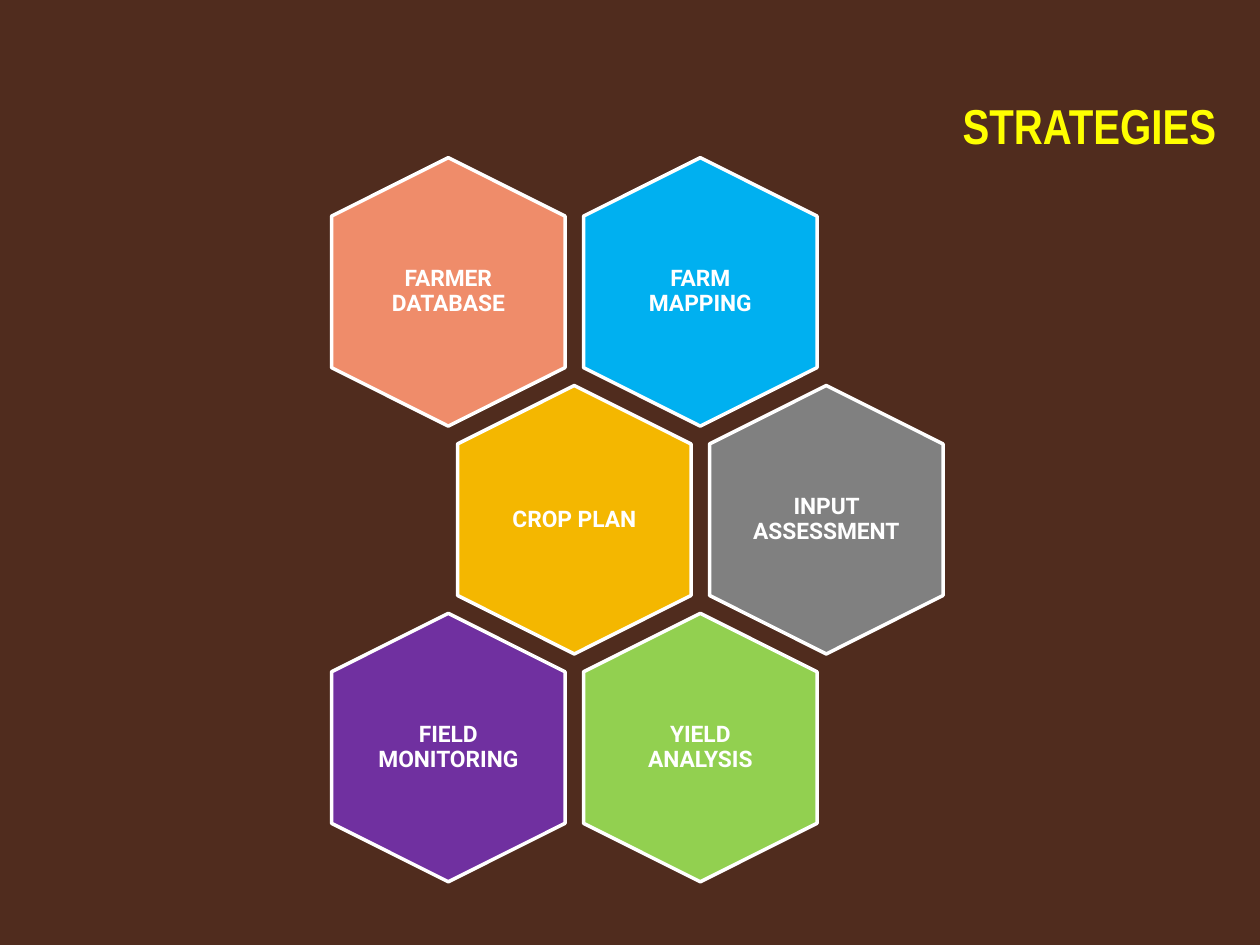
import pptx
import pptx.dml.color
import pptx.enum.text
import pptx.util

Pt = pptx.util.Pt
ALIGN = pptx.enum.text.PP_ALIGN
ANCHOR = pptx.enum.text.MSO_ANCHOR

HEX_WIDTH, HEX_HEIGHT, SHOULDER = 133.4, 153.4, 33.4
GRID_LEFT, GRID_TOP = 189.5, 90.1
COLUMN_PITCH, ROW_PITCH = 144, 130.2

ROWS = [
    [("FARMER DATABASE", "EF8C6A"), ("FARM MAPPING", "00B0F0")],
    [("CROP PLAN", "F4B700"), ("INPUT ASSESSMENT", "808080")],
    [("FIELD MONITORING", "7030A0"), ("YIELD ANALYSIS", "92D050")],
]


def color(value):
    return pptx.dml.color.RGBColor.from_string(value)


def write_text(shape, text, *, font, size, fill, align, anchor,
               margins=(7.2, 3.6), line_spacing=1.0):
    """Fill the shape with one bold paragraph; margins are (sides, top and bottom)."""
    frame = shape.text_frame
    frame.word_wrap = True
    frame.vertical_anchor = anchor
    frame.margin_left = frame.margin_right = Pt(margins[0])
    frame.margin_top = frame.margin_bottom = Pt(margins[1])
    paragraph = frame.paragraphs[0]
    paragraph.alignment = align
    paragraph.line_spacing = line_spacing
    run = paragraph.add_run()
    run.text = text
    run.font.name = font
    run.font.size = Pt(size)
    run.font.bold = True
    run.font.color.rgb = color(fill)


def add_hexagon(slide, left, top, text, fill):
    """Draw a hexagon standing on its point."""
    right, middle = left + HEX_WIDTH, left + HEX_WIDTH / 2
    upper, bottom = top + SHOULDER, top + HEX_HEIGHT
    lower = bottom - SHOULDER
    corners = [(right, upper), (right, lower), (middle, bottom),
               (left, lower), (left, upper)]
    builder = slide.shapes.build_freeform(Pt(middle), Pt(top))
    builder.add_line_segments([(Pt(x), Pt(y)) for x, y in corners], close=True)
    shape = builder.convert_to_shape()
    shape.shadow.inherit = False
    shape.fill.solid()
    shape.fill.fore_color.rgb = color(fill)
    shape.line.color.rgb = color("FFFFFF")
    shape.line.width = Pt(2)
    write_text(shape, text, font="Roboto", size=13, fill="FFFFFF",
               align=ALIGN.CENTER, anchor=ANCHOR.MIDDLE,
               margins=(21, 24), line_spacing=0.9)


def add_honeycomb(slide):
    for row, cells in enumerate(ROWS):
        shift = row % 2 * COLUMN_PITCH / 2
        for column, (text, fill) in enumerate(cells):
            add_hexagon(slide, GRID_LEFT + shift + column * COLUMN_PITCH,
                        GRID_TOP + row * ROW_PITCH, text, fill)


def add_title(slide, text):
    box = slide.shapes.add_textbox(Pt(54), Pt(1.5), Pt(648), Pt(90))
    write_text(box, text, font="Arial Narrow", size=28, fill="FFFF00",
               align=ALIGN.RIGHT, anchor=ANCHOR.BOTTOM)


def main():
    presentation = pptx.Presentation()
    presentation.slide_width, presentation.slide_height = Pt(720), Pt(540)
    slide = presentation.slides.add_slide(presentation.slide_layouts[6])
    slide.background.fill.solid()
    slide.background.fill.fore_color.rgb = color("502C1E")
    add_honeycomb(slide)
    add_title(slide, "STRATEGIES")
    presentation.save("out.pptx")


if __name__ == "__main__":
    main()
